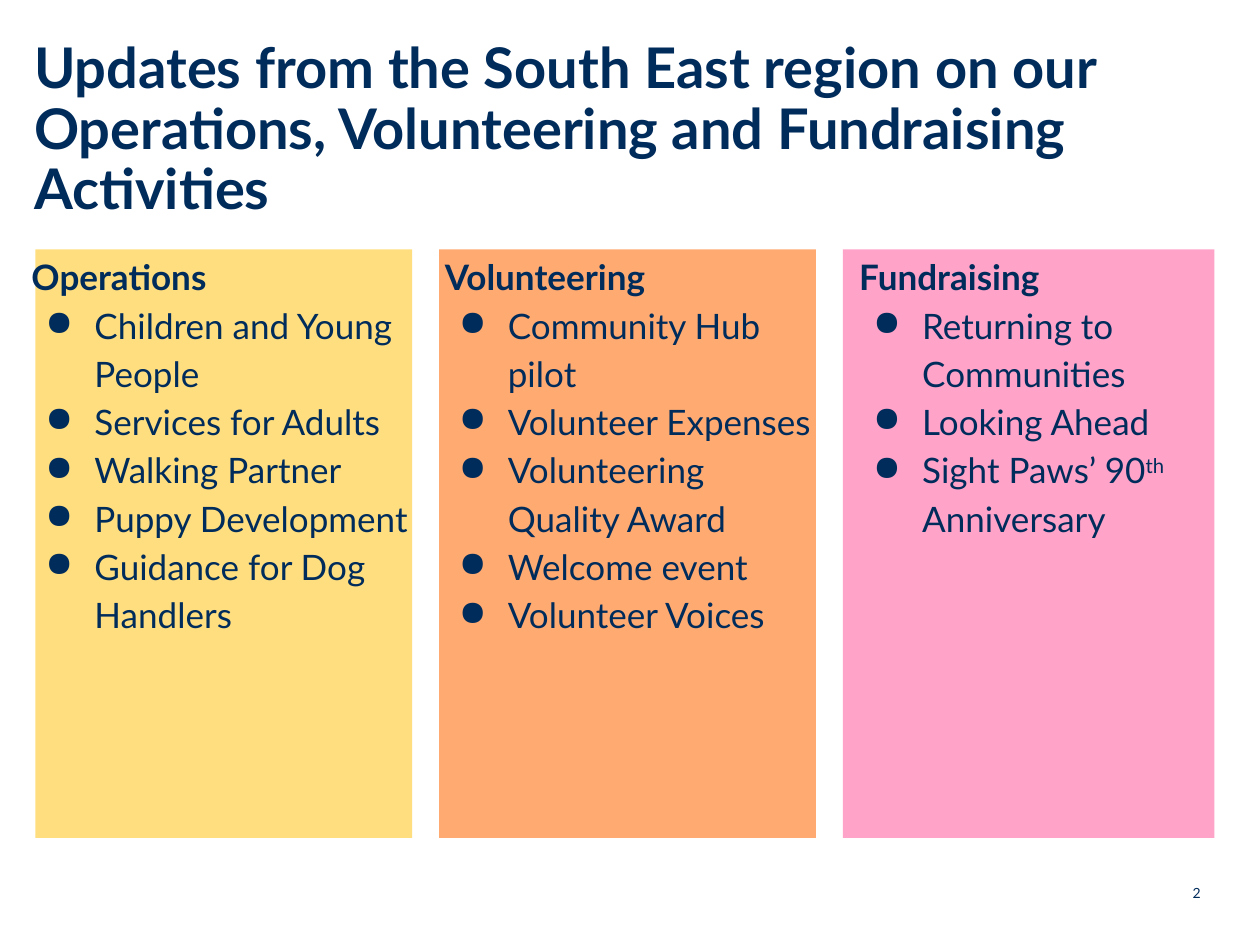
"""Build the regional updates slide with three activity columns."""
from lxml.etree import SubElement
from pptx import Presentation
from pptx.dml.color import RGBColor
from pptx.enum.shapes import MSO_SHAPE
from pptx.enum.text import PP_ALIGN
from pptx.oxml.ns import qn
from pptx.util import Pt

COLOURS = {"navy": "002C5C", "yellow": "FFDE7F", "orange": "FFAA71", "pink": "FFA3C8"}
TITLE = ("Updates from the South East region on our Operations, "
         "Volunteering and Fundraising Activities")
PAGE = "2"
COLUMNS = [
    {"heading": "Operations", "fill": "yellow", "panel_width": 215.3,
     "text_left": 18, "text_width": 219,
     "topics": ["Children and Young People", "Services for Adults", "Walking Partner",
                "Puppy Development", "Guidance for Dog Handlers"]},
    {"heading": "Volunteering", "fill": "orange", "panel_width": 215.3,
     "text_left": 254.2, "text_width": 212.4,
     "topics": ["Community Hub pilot", "Volunteer Expenses", "Volunteering Quality Award",
                "Welcome event", "Volunteer Voices"]},
    {"heading": "Fundraising", "fill": "pink", "panel_width": 212.4,
     "text_left": 491, "text_width": 208.8,
     "topics": ["Returning to Communities", "Looking Ahead",
                ("Sight Paws’ 90", "th", " Anniversary")]},
]
PANEL_LEFT, PANEL_PITCH, PANEL_TOP, PANEL_HEIGHT = 20.2, 230.7, 142.5, 336.3
TEXT_HEIGHT = 315
BULLET = {"marL": Pt(36), "indent": Pt(-28)}
FRAME = {"word_wrap": True, "margin_left": 0, "margin_top": 0,
         "margin_right": 0, "margin_bottom": 0}


def colour(name):
    return RGBColor.from_string(COLOURS[name])


def add_frame(slide, left, top, width, height):
    frame = slide.shapes.add_textbox(Pt(left), Pt(top), Pt(width), Pt(height)).text_frame
    for attribute, value in FRAME.items():
        setattr(frame, attribute, value)
    return frame


def write(paragraph, parts, size, bold=False, spacing=1.0):
    paragraph.line_spacing = spacing
    for part in parts:
        run = paragraph.add_run()
        run.text = part
        for attribute, value in {"name": "Lato", "size": Pt(size), "bold": bold}.items():
            setattr(run.font, attribute, value)
        run.font.color.rgb = colour("navy")
    return paragraph


def add_bullet(paragraph):
    properties = paragraph._p.get_or_add_pPr()
    for attribute, value in BULLET.items():
        properties.set(attribute, str(value))
    tint = SubElement(properties, qn("a:buClr"))
    SubElement(tint, qn("a:srgbClr"), val=COLOURS["navy"])
    SubElement(properties, qn("a:buChar"), char="●")


def add_panel(slide, index, column):
    panel = slide.shapes.add_shape(
        MSO_SHAPE.RECTANGLE, Pt(PANEL_LEFT + index * PANEL_PITCH), Pt(PANEL_TOP),
        Pt(column["panel_width"]), Pt(PANEL_HEIGHT))
    panel.shadow.inherit = False
    panel.fill.solid()
    panel.fill.fore_color.rgb = colour(column["fill"])
    panel.line.fill.background()


def add_topics(slide, column):
    frame = add_frame(slide, column["text_left"], PANEL_TOP, column["text_width"], TEXT_HEIGHT)
    write(frame.paragraphs[0], [column["heading"]], 20, True, 1.15)
    for topic in column["topics"]:
        parts = [topic] if isinstance(topic, str) else topic
        paragraph = write(frame.add_paragraph(), parts, 20, spacing=1.15)
        add_bullet(paragraph)
        for ordinal in paragraph.runs[1:2]:
            ordinal._r.get_or_add_rPr().set("baseline", "30000")


def main():
    deck = Presentation()
    deck.slide_width, deck.slide_height = Pt(720), Pt(540)
    slide = deck.slides.add_slide(deck.slide_layouts[6])
    title = add_frame(slide, 19.5, 23, 666.7, 106.5)
    write(title.paragraphs[0], [TITLE], 32, True, 0.9)
    for index, column in enumerate(COLUMNS):
        add_panel(slide, index, column)
        add_topics(slide, column)
    page = add_frame(slide, 663.8, 505.5, 22.3, 12.2)
    write(page.paragraphs[0], [PAGE], 8).alignment = PP_ALIGN.RIGHT
    deck.save("out.pptx")


if __name__ == "__main__":
    main()
